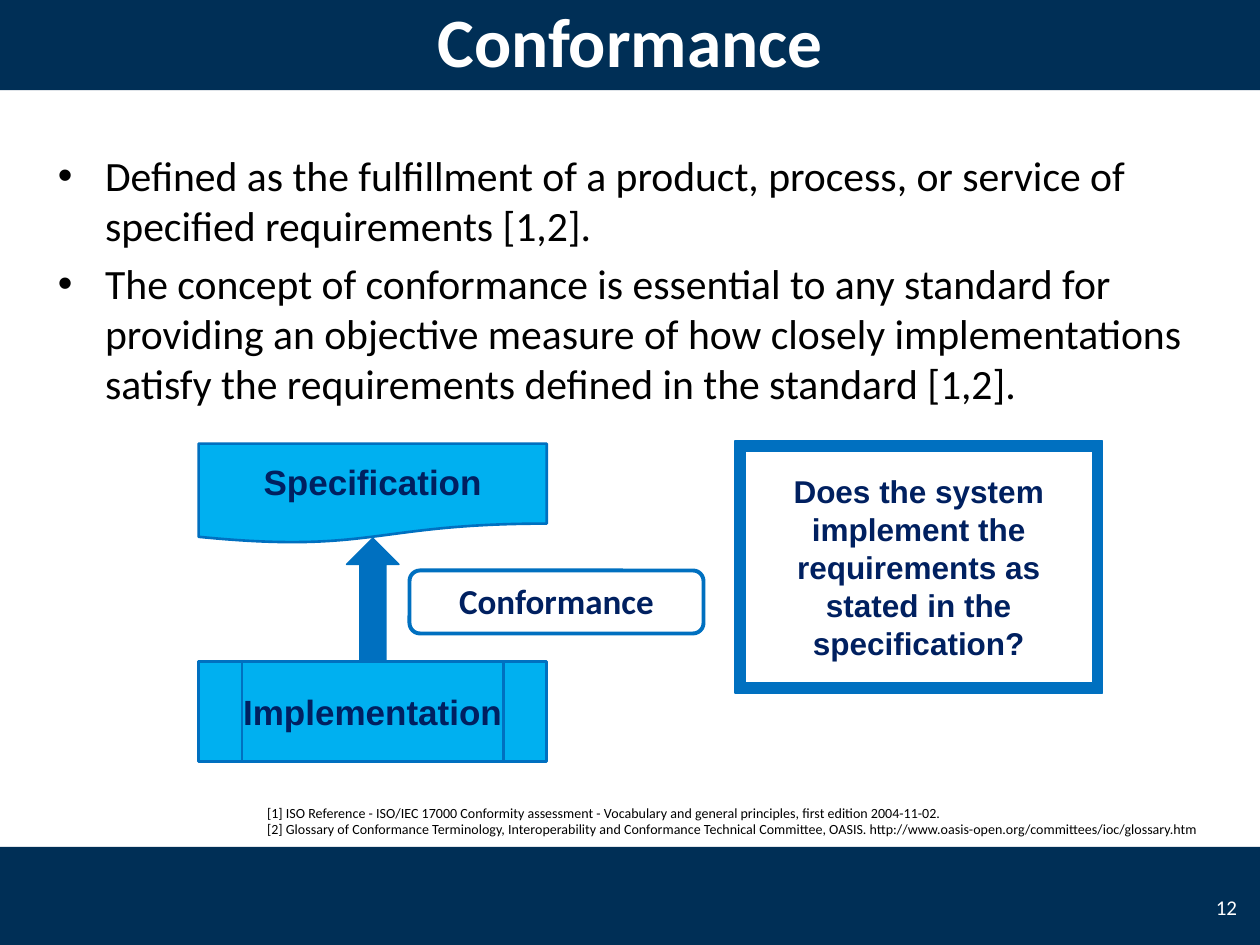
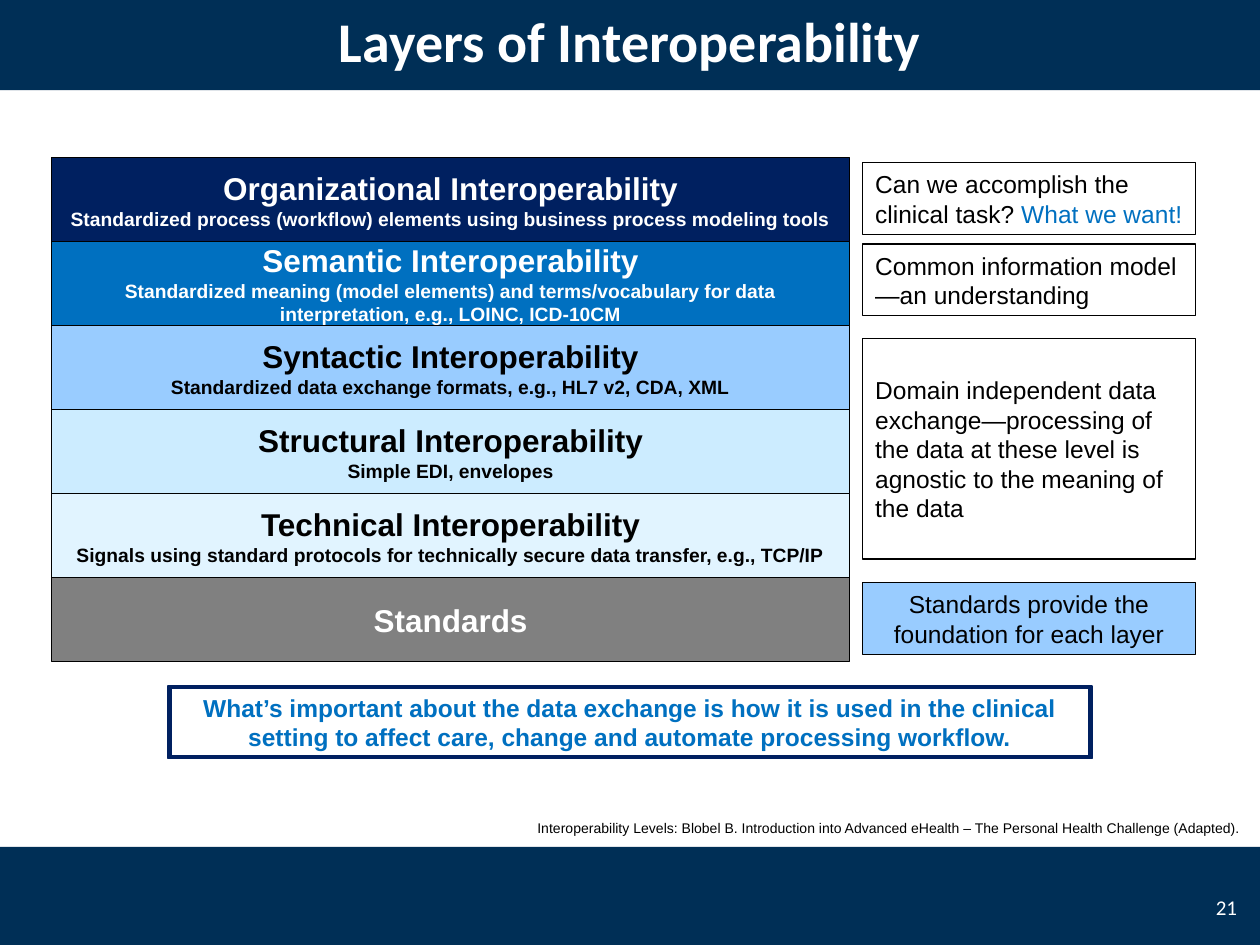
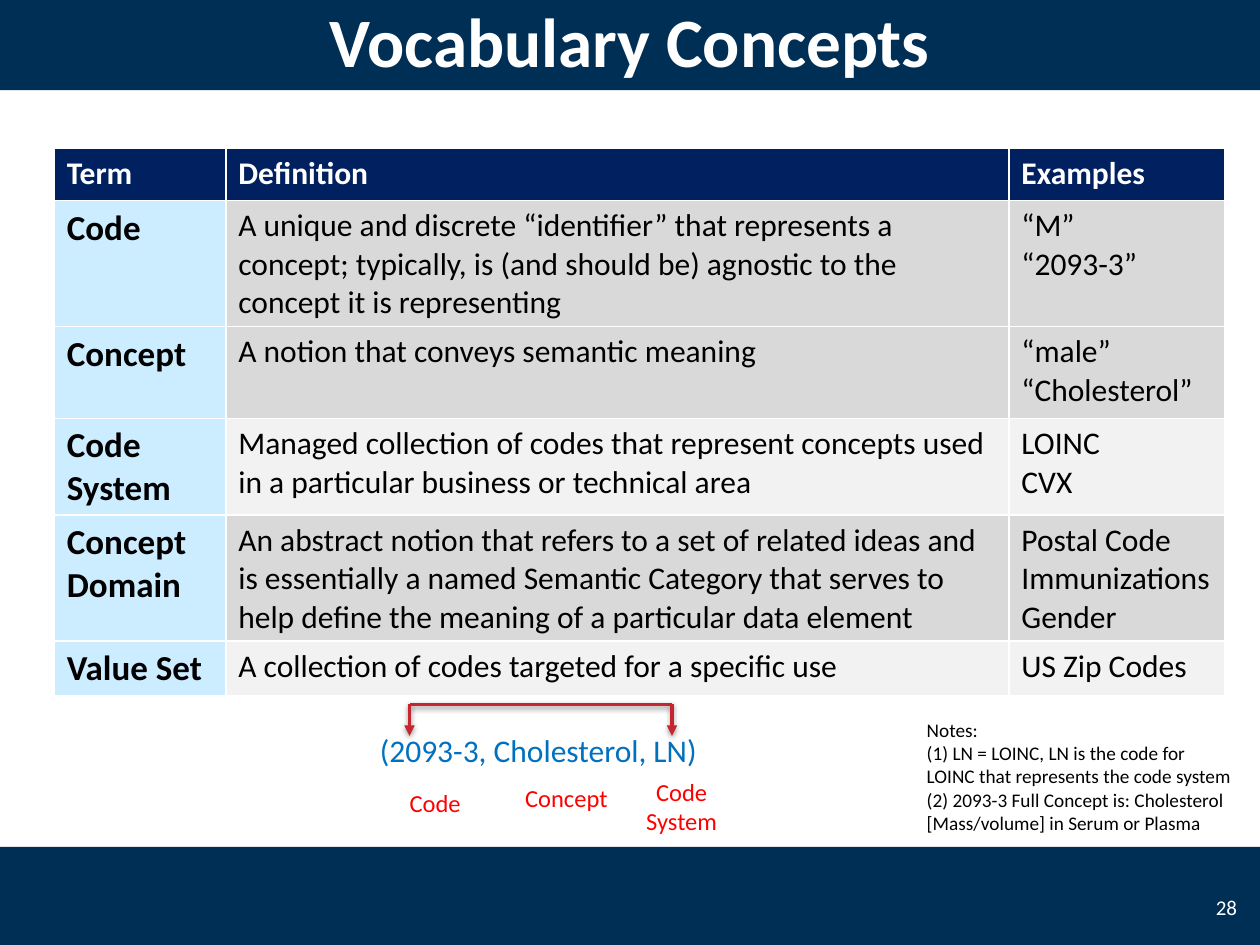
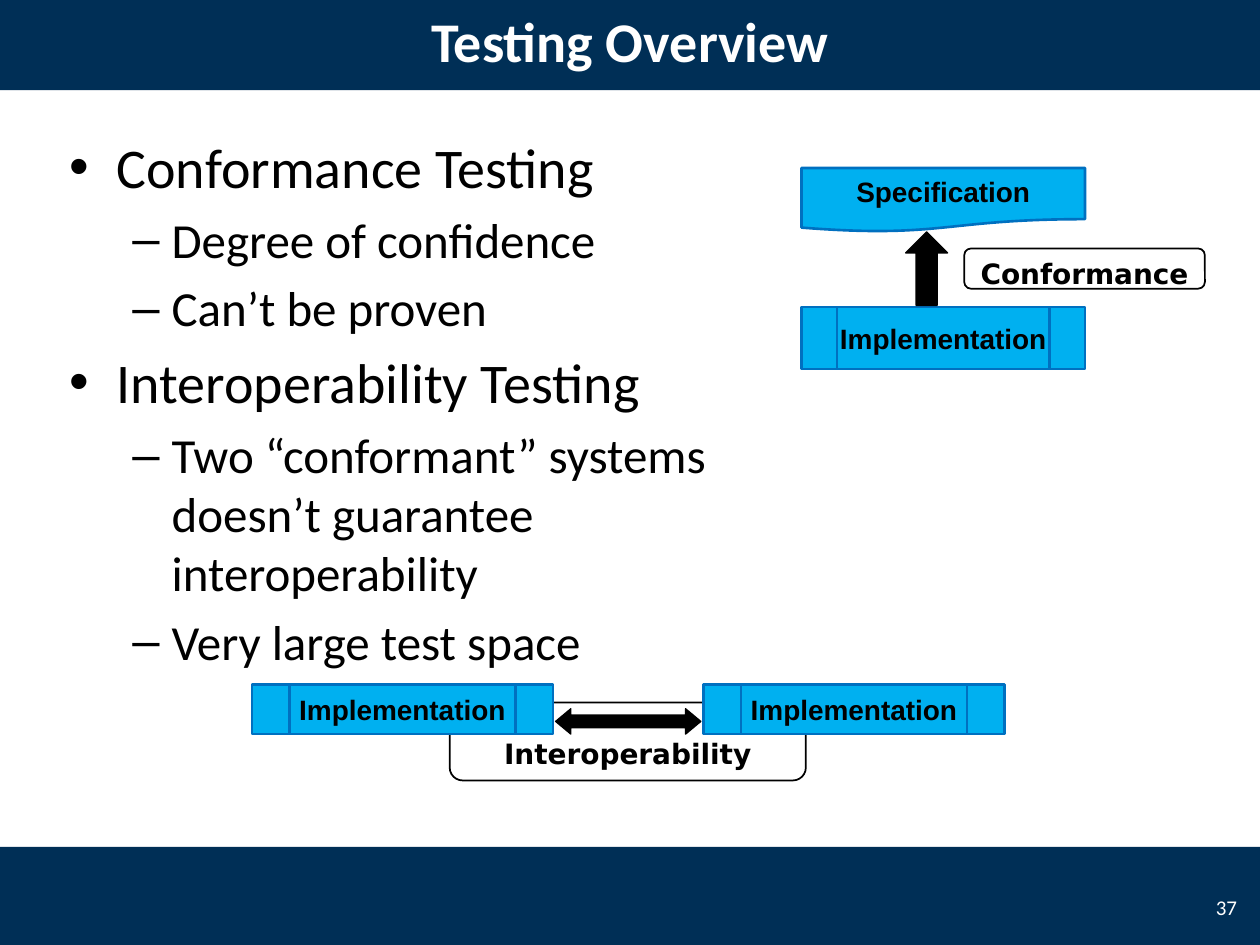
from dataclasses import dataclass
from typing import NamedTuple, Optional

from lxml import etree
from pptx import Presentation
from pptx.dml.color import RGBColor
from pptx.enum.shapes import MSO_CONNECTOR, MSO_SHAPE
from pptx.enum.text import MSO_ANCHOR, PP_ALIGN
from pptx.oxml import parse_xml
from pptx.oxml.ns import nsdecls, qn
from pptx.util import Pt

RECTANGLE = MSO_SHAPE.RECTANGLE
ROUNDED = MSO_SHAPE.ROUNDED_RECTANGLE
PROCESS = MSO_SHAPE.FLOWCHART_PREDEFINED_PROCESS
DOCUMENT = MSO_SHAPE.FLOWCHART_DOCUMENT
DOWN_ARROW = MSO_SHAPE.DOWN_ARROW
DOUBLE_ARROW = MSO_SHAPE.LEFT_RIGHT_ARROW
FRAME = MSO_SHAPE.FRAME
STRAIGHT = MSO_CONNECTOR.STRAIGHT
TOP, MIDDLE, BOTTOM = MSO_ANCHOR.TOP, MSO_ANCHOR.MIDDLE, MSO_ANCHOR.BOTTOM
LEFT, CENTER, RIGHT = PP_ALIGN.LEFT, PP_ALIGN.CENTER, PP_ALIGN.RIGHT

WHITE = RGBColor(0xFF, 0xFF, 0xFF)
BLACK = RGBColor(0x00, 0x00, 0x00)
BAND = RGBColor(0x00, 0x2F, 0x56)
NAVY = RGBColor(0x00, 0x20, 0x60)
BLUE = RGBColor(0x00, 0x70, 0xC0)
CYAN = RGBColor(0x00, 0xB0, 0xF0)
SKY = RGBColor(0x99, 0xCC, 0xFF)
PALE = RGBColor(0xCC, 0xEC, 0xFF)
PALEST = RGBColor(0xE1, 0xF4, 0xFF)
GRAY = RGBColor(0x80, 0x80, 0x80)
ROW_DARK = RGBColor(0xD9, 0xD9, 0xD9)
ROW_LIGHT = RGBColor(0xF2, 0xF2, 0xF2)
RED = RGBColor(0xFF, 0x00, 0x00)
CRIMSON = RGBColor(0xC6, 0x26, 0x30)

CALIBRI, ARIAL, DEJAVU = "Calibri", "Arial", "DejaVu Sans"
PAGE_WIDTH, PAGE_HEIGHT = 720, 540
BAND_HEIGHT = 57.6


class Box(NamedTuple):
    """Place and size in points."""
    left: float
    top: float
    width: float
    height: float


class Bullet(NamedTuple):
    """Bullet mark of a list level."""
    mark: str
    margin: float
    hang: float
    level: int


class Layer(NamedTuple):
    """One layer of the interoperability stack."""
    name: str
    detail: str
    fill: RGBColor
    color: RGBColor


class Remark(NamedTuple):
    """Boxed remark beside the stack."""
    text: str
    top: float
    height: float
    align: PP_ALIGN = LEFT
    fill: Optional[RGBColor] = None
    accent: str = ""


class Term(NamedTuple):
    """One row of the vocabulary table."""
    name: str
    definition: str
    examples: list[str]
    fill: RGBColor


class Label(NamedTuple):
    """Red label below the code triple."""
    text: str
    box: Box
    align: PP_ALIGN = LEFT


@dataclass(frozen=True)
class ConformanceDiagram:
    """Specification, implementation and the relation between them."""
    specification: Box
    implementation: Box
    arrow: Box
    label: Box
    size: float
    label_size: float
    label_font: str
    color: RGBColor
    arrow_color: RGBColor
    label_line: RGBColor
    label_width: float


MAIN_BULLET = Bullet("•", 27, 27, 0)
SUB_BULLET = Bullet("–", 58.5, 22.5, 1)

LAYERS = [
    Layer("Organizational Interoperability",
          "Standardized process (workflow) elements using business process modeling tools", NAVY, WHITE),
    Layer("Semantic Interoperability",
          "Standardized meaning (model elements) and terms/vocabulary for data interpretation, "
          "e.g., LOINC, ICD-10CM", BLUE, WHITE),
    Layer("Syntactic Interoperability",
          "Standardized data exchange formats, e.g., HL7 v2, CDA, XML", SKY, BLACK),
    Layer("Structural Interoperability", "Simple EDI, envelopes", PALE, BLACK),
    Layer("Technical Interoperability",
          "Signals using standard protocols for technically secure data transfer, e.g., TCP/IP",
          PALEST, BLACK),
    Layer("Standards", "", GRAY, WHITE),
]

REMARKS = [
    Remark("Can we accomplish the clinical task? ", 93, 41, accent="What we want!"),
    Remark("Common information model—an understanding", 139.5, 41),
    Remark("Domain independent data exchange—processing of the data at these level is agnostic "
           "to the meaning of the data", 193.5, 126),
    Remark("Standards provide the foundation for each layer", 333, 41, CENTER, SKY),
]

TERMS = [
    Term("Code", "A unique and discrete “identifier” that represents a concept; typically, is "
         "(and should be) agnostic to the concept it is representing", ["“M”", "“2093-3”"], ROW_DARK),
    Term("Concept", "A notion that conveys semantic meaning", ["“male”", "“Cholesterol”"], ROW_DARK),
    Term("Code System", "Managed collection of codes that represent concepts used in a particular "
         "business or technical area", ["LOINC", "CVX"], ROW_LIGHT),
    Term("Concept Domain", "An abstract notion that refers to a set of related ideas and is "
         "essentially a named Semantic Category that serves to help define the meaning of a "
         "particular data element", ["Postal Code", "Immunizations", "Gender"], ROW_DARK),
    Term("Value Set", "A collection of codes targeted for a specific use", ["US Zip Codes"], ROW_LIGHT),
]

LABELS = [
    Label("Code", Box(227, 446.5, 53, 24.5)),
    Label("Concept", Box(293, 444, 66, 24.5)),
    Label("Code System", Box(356.5, 440.5, 66, 41), CENTER),
]

NOTES = [
    "Notes:",
    "(1) LN = LOINC, LN is the code for LOINC that represents the code system",
    "(2) 2093-3 Full Concept is: Cholesterol [Mass/volume] in Serum or Plasma",
]

DEFINITIONS = [
    "Defined as the fulfillment of a product, process, or service of specified requirements [1,2].",
    "The concept of conformance is essential to any standard for providing an objective measure of "
    "how closely implementations satisfy the requirements defined in the standard [1,2].",
]

REFERENCES = [
    "[1] ISO Reference - ISO/IEC 17000 Conformity assessment - Vocabulary and general principles, "
    "first edition 2004-11-02.",
    "[2] Glossary of Conformance Terminology, Interoperability and Conformance Technical Committee, "
    "OASIS. http://www.oasis-open.org/committees/ioc/glossary.htm",
]

TESTING = [
    ("Conformance Testing", ["Degree of confidence", "Can’t be proven"]),
    ("Interoperability Testing",
     ["Two “conformant” systems doesn’t guarantee interoperability", "Very large test space"]),
]

LARGE_DIAGRAM = ConformanceDiagram(
    specification=Box(113.5, 253.5, 199, 57), implementation=Box(113.5, 378, 199, 57),
    arrow=Box(198, 307.5, 30, 70.5), label=Box(234, 326, 168, 36),
    size=20, label_size=20, label_font=CALIBRI, color=NAVY,
    arrow_color=BLUE, label_line=BLUE, label_width=2.25)

SMALL_DIAGRAM = ConformanceDiagram(
    specification=Box(458, 96, 162, 36.5), implementation=Box(458, 175.5, 162, 35.5),
    arrow=Box(517.5, 132.5, 24, 42), label=Box(551, 142, 137.5, 23),
    size=16, label_size=16, label_font=DEJAVU, color=BLACK,
    arrow_color=BLACK, label_line=BLACK, label_width=1)


def in_points(values) -> list:
    """Turn numbers into lengths."""
    return [Pt(value) for value in values]


def add_text(frame, text: str, *, size: float, color: RGBColor = BLACK, font: str = CALIBRI,
             bold: bool = False, align: PP_ALIGN = LEFT, bullet: Optional[Bullet] = None,
             line_spacing: Optional[float] = None, para=None):
    """Write a paragraph, or continue the one given as para."""
    if para is None:
        first = not frame.paragraphs[0].runs
        para = frame.paragraphs[0] if first else frame.add_paragraph()
        para.alignment = align
        if bullet:
            para.level = bullet.level
            properties = para._p.get_or_add_pPr()
            properties.set("marL", str(Pt(bullet.margin)))
            properties.set("indent", str(Pt(-bullet.hang)))
            etree.SubElement(properties, qn("a:buFont")).set("typeface", ARIAL)
            etree.SubElement(properties, qn("a:buChar")).set("char", bullet.mark)
            if not first:
                para.space_before = Pt(round(size * 0.2, 1))
        if line_spacing:
            para.line_spacing = line_spacing
    span = para.add_run()
    span.text = text
    span.font.size = Pt(size)
    span.font.name = font
    span.font.bold = bold
    span.font.color.rgb = color
    return para


def add_text_box(page, box: Box, anchor: MSO_ANCHOR = TOP):
    """Add an empty text box and return its text frame."""
    frame = page.shapes.add_textbox(*in_points(box)).text_frame
    frame.word_wrap = True
    frame.vertical_anchor = anchor
    return frame


def add_block(page, kind: MSO_SHAPE, box: Box, *, fill: Optional[RGBColor] = None,
              line: Optional[RGBColor] = None, width: float = 0.75,
              anchor: MSO_ANCHOR = MIDDLE, wrap: bool = True):
    """Add a flat preset shape."""
    shape = page.shapes.add_shape(kind, *in_points(box))
    shape.shadow.inherit = False
    if fill is None:
        shape.fill.background()
    else:
        shape.fill.solid()
        shape.fill.fore_color.rgb = fill
    if line is None:
        shape.line.fill.background()
    else:
        shape.line.color.rgb = line
        shape.line.width = Pt(width)
    shape.text_frame.word_wrap = wrap
    shape.text_frame.vertical_anchor = anchor
    return shape


def add_frame(page, box: Box, text: str, *, size: float, fill: RGBColor, color: RGBColor) -> None:
    """Add a picture-frame shape around a bold statement."""
    shape = add_block(page, FRAME, box, fill=fill, line=fill)
    shape.adjustments[0] = 0.04
    add_text(shape.text_frame, text, size=size, color=color, font=ARIAL, bold=True, align=CENTER)


def add_implementation(page, box: Box, size: float, color: RGBColor) -> None:
    """Add an implementation block."""
    shape = add_block(page, PROCESS, box, fill=CYAN, line=BLUE, width=1.5, wrap=False)
    add_text(shape.text_frame, "Implementation", size=size, color=color, font=ARIAL,
             bold=True, align=CENTER)


def add_relation(page, box: Box, text: str, *, size: float, font: str, color: RGBColor,
                 line: RGBColor, width: float, anchor: MSO_ANCHOR = TOP) -> None:
    """Add a rounded label that names a relation."""
    shape = add_block(page, ROUNDED, box, fill=WHITE, line=line, width=width, anchor=anchor)
    add_text(shape.text_frame, text, size=size, color=color, font=font, bold=True, align=CENTER)


def add_diagram(page, diagram: ConformanceDiagram) -> None:
    """Draw a conformance diagram."""
    add_relation(page, diagram.label, "Conformance", size=diagram.label_size,
                 font=diagram.label_font, color=diagram.color, line=diagram.label_line,
                 width=diagram.label_width)
    add_implementation(page, diagram.implementation, diagram.size, diagram.color)
    document = add_block(page, DOCUMENT, diagram.specification, fill=CYAN, line=BLUE, width=1.5)
    add_text(document.text_frame, "Specification", size=diagram.size, color=diagram.color,
             font=ARIAL, bold=True, align=CENTER, line_spacing=0.93)
    arrow = add_block(page, DOWN_ARROW, diagram.arrow, fill=diagram.arrow_color,
                      line=diagram.arrow_color)
    arrow.rotation = 180


def add_line(page, start: tuple, end: tuple, arrow: bool = False) -> None:
    """Add a crimson line with a soft shadow."""
    line = page.shapes.add_connector(STRAIGHT, *in_points(start + end))
    line.line.color.rgb = CRIMSON
    line.line.width = Pt(2)
    if arrow:
        etree.SubElement(line.line._get_or_add_ln(), qn("a:tailEnd")).set("type", "triangle")
    line._element.spPr.append(parse_xml(
        f'<a:effectLst {nsdecls("a")}>'
        f'<a:outerShdw blurRad="{Pt(3.1)}" dist="{Pt(1.6)}" dir="5400000" rotWithShape="0">'
        '<a:srgbClr val="000000"><a:alpha val="38000"/></a:srgbClr>'
        '</a:outerShdw></a:effectLst>'))


def add_page(deck, title: str, number: int, title_size: float):
    """Add a page with bands, title and page number."""
    page = deck.slides.add_slide(deck.slide_layouts[6])
    header = Box(0, -6, PAGE_WIDTH, BAND_HEIGHT)
    for band in (Box(0, 484, PAGE_WIDTH, BAND_HEIGHT), header):
        add_block(page, RECTANGLE, band, fill=BAND)
    add_text(add_text_box(page, Box(684, 504, 30, 29), MIDDLE), str(number),
             size=12, color=WHITE, align=RIGHT)
    add_text(add_text_box(page, header, MIDDLE), title,
             size=title_size, color=WHITE, bold=True, align=CENTER)
    return page


def build_conformance(deck) -> None:
    """Build the page that defines conformance."""
    page = add_page(deck, "Conformance", 12, 39.6)
    body = add_text_box(page, Box(26, 82, 658, 158))
    for definition in DEFINITIONS:
        add_text(body, definition, size=23.8, bullet=MAIN_BULLET)
    add_diagram(page, LARGE_DIAGRAM)
    add_frame(page, Box(420, 252, 210, 144),
              "Does the system implement the requirements as stated in the specification?",
              size=18, fill=BLUE, color=NAVY)
    sources = add_text_box(page, Box(145.5, 456, 569, 26.5))
    for reference in REFERENCES:
        add_text(sources, reference, size=8)


def build_layers(deck) -> None:
    """Build the page with the interoperability stack."""
    page = add_page(deck, "Layers of Interoperability", 21, 32)
    height = 48
    for index, layer in enumerate(LAYERS):
        box = Box(29.5, 90 + index * height, 456, height)
        frame = add_block(page, RECTANGLE, box, fill=layer.fill, line=BLACK).text_frame
        for text, size in ((layer.name, 18), (layer.detail, 11)):
            if text:
                add_text(frame, text, size=size, color=layer.color, font=ARIAL,
                         bold=True, align=CENTER)
    add_text(add_text_box(page, Box(300, 465, 420, 17)),
             "Interoperability Levels: Blobel B. Introduction into Advanced eHealth – "
             "The Personal Health Challenge (Adapted).", size=8, font=ARIAL)
    for remark in REMARKS:
        box = Box(493, remark.top, 190, remark.height)
        frame = add_block(page, RECTANGLE, box, fill=remark.fill, line=BLACK).text_frame
        para = add_text(frame, remark.text, size=14, font=ARIAL, align=remark.align)
        if remark.accent:
            add_text(frame, remark.accent, size=14, color=BLUE, font=ARIAL, para=para)
    add_frame(page, Box(96, 392, 528, 41.5),
              "What’s important about the data exchange is how it is used in the clinical setting "
              "to affect care, change and automate processing workflow.",
              size=14, fill=NAVY, color=BLUE)


def fill_cell(cell, lines: list[str], *, fill: RGBColor, size: float = 18,
              color: RGBColor = BLACK, bold: bool = False) -> None:
    """Write lines into a table cell and colour it."""
    cell.fill.solid()
    cell.fill.fore_color.rgb = fill
    for line in lines:
        add_text(cell.text_frame, line, size=size, color=color, bold=bold)


def add_vocabulary_table(page) -> None:
    """Add the table of vocabulary terms."""
    heights = [30, 52.5, 52.5, 52.5, 52.5, 30]
    widths = [98, 447.5, 123.5]
    box = Box(31, 84.5, sum(widths), sum(heights))
    table = page.shapes.add_table(len(heights), len(widths), *in_points(box)).table
    table.horz_banding = False
    for row, height in zip(table.rows, heights):
        row.height = Pt(height)
    for column, width in zip(table.columns, widths):
        column.width = Pt(width)
    for index, heading in enumerate(["Term", "Definition", "Examples"]):
        fill_cell(table.cell(0, index), [heading], fill=NAVY, color=WHITE, bold=True)
    for index, term in enumerate(TERMS, start=1):
        fill_cell(table.cell(index, 0), [term.name], fill=PALE, size=20, bold=True)
        fill_cell(table.cell(index, 1), [term.definition], fill=term.fill)
        fill_cell(table.cell(index, 2), term.examples, fill=term.fill)


def build_vocabulary(deck) -> None:
    """Build the page with the vocabulary table."""
    page = add_page(deck, "Vocabulary Concepts", 28, 39.6)
    add_vocabulary_table(page)
    add_text(add_text_box(page, Box(210, 414, 204, 29)), "(2093-3, Cholesterol, LN)",
             size=18, color=BLUE)
    code_x, system_x, bar_y, tip_y = 234, 384, 402.5, 420.5
    add_line(page, (code_x, bar_y), (system_x, bar_y))
    for x in (system_x, code_x):
        add_line(page, (x, bar_y), (x, tip_y), arrow=True)
    notes = add_text_box(page, Box(522.5, 407, 191.5, 74))
    for note in NOTES:
        add_text(notes, note, size=11)
    for label in LABELS:
        add_text(add_text_box(page, label.box), label.text, size=14, color=RED, align=label.align)


def build_testing(deck) -> None:
    """Build the page that compares the two kinds of testing."""
    page = add_page(deck, "Testing Overview", 37, 32)
    body = add_text_box(page, Box(32.5, 72, 400, 305))
    for topic, points in TESTING:
        add_text(body, topic, size=32, bullet=MAIN_BULLET)
        for point in points:
            add_text(body, point, size=28, bullet=SUB_BULLET)
    add_diagram(page, SMALL_DIAGRAM)
    add_relation(page, Box(257, 401.5, 203.5, 44.5), "Interoperability", size=16, font=DEJAVU,
                 color=BLACK, line=BLACK, width=1, anchor=BOTTOM)
    for left in (144, 402):
        add_implementation(page, Box(left, 391, 172, 28.5), 16, BLACK)
    arrow = add_block(page, DOUBLE_ARROW, Box(317.5, 405, 83, 14.5), fill=BLACK, line=BLACK)
    arrow.adjustments[1] = 0.6


def main() -> None:
    """Build and save the deck."""
    deck = Presentation()
    deck.slide_width, deck.slide_height = Pt(PAGE_WIDTH), Pt(PAGE_HEIGHT)
    for build in (build_conformance, build_layers, build_vocabulary, build_testing):
        build(deck)
    deck.save("out.pptx")


if __name__ == "__main__":
    main()
